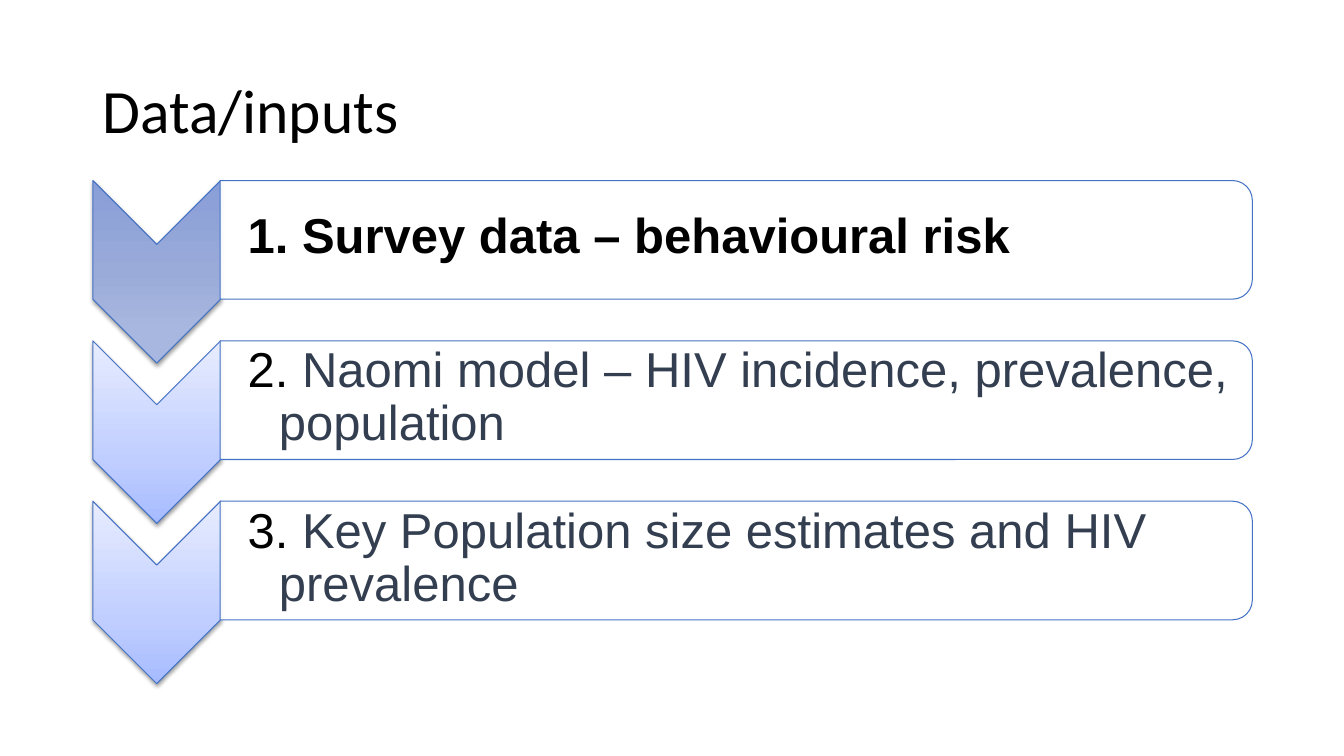
import pptx
import pptx.util
import pptx.dml.color
import pptx.enum.shapes
import pptx.enum.text
import pptx.oxml
import pptx.oxml.ns
import lxml.etree

Cm = pptx.util.Cm
Pt = pptx.util.Pt
SHAPES = pptx.enum.shapes.MSO_SHAPE
MIDDLE = pptx.enum.text.MSO_ANCHOR.MIDDLE
NS = pptx.oxml.ns.nsdecls("a")


def color(value):
    return pptx.dml.color.RGBColor.from_string(value)


def add_rotated(kind, left, top, width, height):
    shape = slide.shapes.add_shape(kind, Cm(left), Cm(top), Cm(width), Cm(height))
    shape.rotation = 90
    shape.shadow.inherit = False
    shape.line.color.rgb = color("4472C4")
    shape.line.width = Pt(0.75)
    return shape


active_stops = [(0, "A8B7DF"), (21, "A7B6DE"), (50, "9AABD9"), (100, "889ED7")]
muted_stops = [(0, "A6BBFF"), (35, "C0CEFF"), (100, "E7ECFF")]
inputs = [
    (" Survey data – behavioural risk", "000000", True, active_stops),
    (" Naomi model – HIV incidence, prevalence, population", "333F50", False, muted_stops),
    (" Key Population size estimates and HIV prevalence", "333F50", False, muted_stops),
]
pitch = 4.04

deck = pptx.Presentation()
deck.slide_width = Cm(33.87)
deck.slide_height = Cm(19.05)
slide = deck.slides.add_slide(deck.slide_layouts[5])

title = slide.shapes.title
title.left, title.top, title.width, title.height = Cm(2.33), Cm(1.01), Cm(29.21), Cm(3.68)
title.text_frame.text = "Data/inputs"
title.text_frame.vertical_anchor = MIDDLE
heading = title.text_frame.paragraphs[0]
heading.alignment = pptx.enum.text.PP_ALIGN.LEFT
heading.line_spacing = 0.9
heading.font.name = "Calibri"
heading.font.size = Pt(44)
heading.font.color.rgb = color("000000")

for index, (wording, ink, bold, stops) in enumerate(inputs):
    offset = index * pitch

    chevron = add_rotated(SHAPES.CHEVRON, 1.65, 5.24 + offset, 4.6, 3.22)
    chevron.fill.gradient()
    gradient = chevron.fill._xPr.find(pptx.oxml.ns.qn("a:gradFill"))
    stop_xml = "".join(
        f'<a:gs pos="{place * 1000}"><a:srgbClr val="{shade}"/></a:gs>' for place, shade in stops
    )
    gradient.getparent().replace(gradient, pptx.oxml.parse_xml(
        f'<a:gradFill {NS} rotWithShape="0"><a:gsLst>{stop_xml}</a:gsLst>'
        '<a:lin ang="16200000" scaled="0"/></a:gradFill>'
    ))
    effects = chevron._element.spPr.find(pptx.oxml.ns.qn("a:effectLst"))
    effects.append(pptx.oxml.parse_xml(
        f'<a:outerShdw {NS} blurRad="{Pt(3.1)}" dist="{Pt(1.6)}" dir="5400000" rotWithShape="0">'
        '<a:srgbClr val="000000"><a:alpha val="38000"/></a:srgbClr></a:outerShdw>'
    ))

    bar = add_rotated(SHAPES.ROUND_2_SAME_RECTANGLE, 17.06, -6.96 + offset, 2.99, 26.01)
    bar.fill.solid()
    bar.fill.fore_color.rgb = color("FFFFFF")
    white = bar._element.spPr.find(".//" + pptx.oxml.ns.qn("a:srgbClr"))
    lxml.etree.SubElement(white, pptx.oxml.ns.qn("a:alpha"), val="90000")

    label = slide.shapes.add_textbox(Cm(5.55), Cm(4.65 + offset), Cm(25.86), Cm(2.7))
    frame = label.text_frame
    frame.word_wrap = True
    frame.vertical_anchor = MIDDLE
    frame.margin_left = Cm(0.69)
    frame.margin_top = frame.margin_right = frame.margin_bottom = Cm(0.05)
    entry = frame.paragraphs[0]
    entry.text = wording
    entry.level = 1
    entry.line_spacing = 0.9
    entry.font.name = "Arial"
    entry.font.size = Pt(35)
    entry.font.bold = bold
    entry.font.color.rgb = color(ink)
    numbering = entry._p.get_or_add_pPr()
    numbering.set("marL", str(Cm(0.79)))
    numbering.set("indent", str(-Cm(0.79)))
    spacing = numbering.find(pptx.oxml.ns.qn("a:lnSpc"))
    spacing.addnext(pptx.oxml.parse_xml(
        f'<a:buAutoNum {NS} type="arabicPeriod" startAt="{index + 1}"/>'
    ))
    spacing.addnext(pptx.oxml.parse_xml(
        f'<a:buClr {NS}><a:srgbClr val="000000"/></a:buClr>'
    ))

deck.save("out.pptx")
